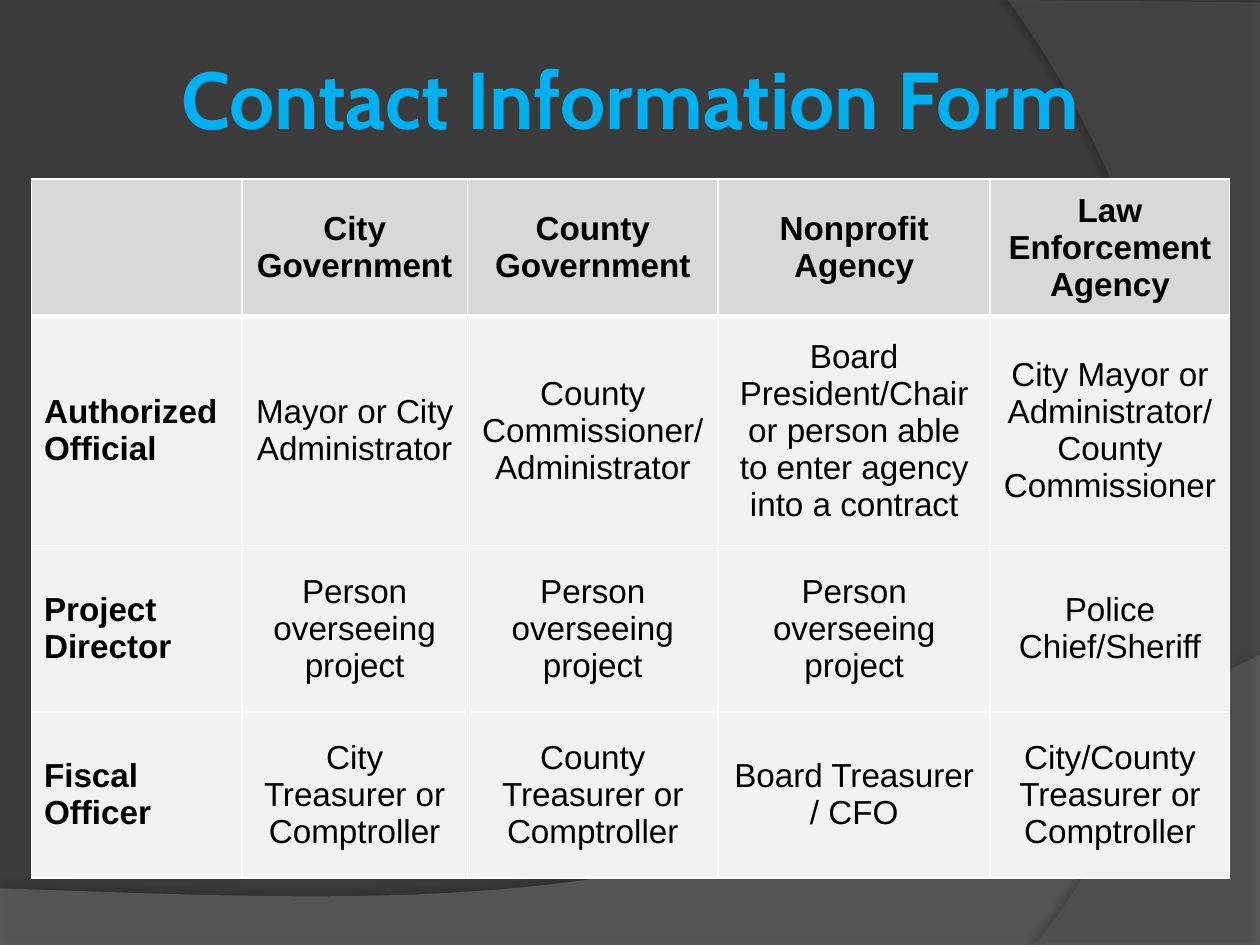
from lxml.etree import SubElement
from pptx import Presentation
from pptx.dml.color import RGBColor
from pptx.enum.text import MSO_ANCHOR, PP_ALIGN
from pptx.oxml import parse_xml
from pptx.oxml.ns import nsdecls, qn
from pptx.util import Inches, Pt

BACKDROP = RGBColor(0x3B, 0x3B, 0x3B)
LOWER_WAVE = RGBColor(0x7F, 0x7F, 0x7F)
RIGHT_WAVE = RGBColor(0x5E, 0x5E, 0x5E)
TITLE_BLUE = RGBColor(0x00, 0xB0, 0xF0)
HEADER_GREY = RGBColor(0xD8, 0xD8, 0xD8)
BODY_GREY = RGBColor(0xF2, 0xF2, 0xF2)
BLACK = RGBColor(0, 0, 0)
WHITE = RGBColor(0xFF, 0xFF, 0xFF)

COLUMN_WIDTHS = [1.67, 1.79, 1.99, 2.16, 1.9]
ROW_HEIGHTS = [1.09, 1.82, 1.32, 1.32]
CONTACTS = [
    ["", "City Government", "County Government", "Nonprofit Agency",
     "Law Enforcement Agency"],
    ["Authorized Official", "Mayor or City Administrator",
     "County Commissioner/ Administrator",
     "Board President/Chair or person able to enter agency into a contract",
     "City Mayor or Administrator/ County Commissioner"],
    ["Project Director"] + ["Person overseeing project"] * 3
    + ["Police Chief/Sheriff"],
    ["Fiscal Officer", "City Treasurer or Comptroller",
     "County Treasurer or Comptroller", "Board Treasurer / CFO",
     "City/County Treasurer or Comptroller"],
]


def curve_points(start, first, second, end, steps=40):
    """Return points along a cubic curve, without its start."""
    points = []
    for step in range(1, steps + 1):
        t = step / steps
        weights = ((1 - t) ** 3, 3 * t * (1 - t) ** 2, 3 * t * t * (1 - t), t ** 3)
        points.append(tuple(
            sum(weight * value for weight, value in zip(weights, values))
            for values in zip(start, first, second, end)))
    return points


def add_wave(page, box, corners, bends, color, opacity, shadow):
    """Draw a translucent wave whose corners and bends are relative to the box."""
    left, top = box
    points = corners + curve_points(corners[-1], *bends)
    placed = [(Inches(left + x), Inches(top + y)) for x, y in points]
    builder = page.shapes.build_freeform(*placed[0])
    builder.add_line_segments(placed[1:], close=True)
    wave = builder.convert_to_shape()
    wave.fill.solid()
    wave.fill.fore_color.rgb = color
    wave.line.fill.background()
    wave.shadow.inherit = False
    properties = wave.element.spPr
    tint = properties.find(qn("a:solidFill")).find(qn("a:srgbClr"))
    SubElement(tint, qn("a:alpha"), val=str(opacity * 1000))
    strength, blur, distance, angle = shadow
    outer = SubElement(
        properties.find(qn("a:effectLst")), qn("a:outerShdw"),
        blurRad=str(Pt(blur)), dist=str(Pt(distance)),
        dir=str(angle * 60000), algn="ctr", rotWithShape="0")
    shade = SubElement(outer, qn("a:srgbClr"), val=str(BLACK))
    SubElement(shade, qn("a:alpha"), val=str(strength * 1000))


def add_backdrop(page):
    """Fill the background and lay both waves over it."""
    page.background.fill.solid()
    page.background.fill.fore_color.rgb = BACKDROP
    add_wave(page, (0, 5.2), [(0, 1.85), (0, 2.3), (10, 2.3), (10, 0)],
             [(5.59, 2.09), (3.91, 1.99), (0, 1.85)],
             LOWER_WAVE, 45, (35, 4, 3.5, 270))
    add_wave(page, (8, 0), [(2, 0.02), (2, 7.5), (0.21, 7.5)],
             [(1.35, 6.19), (2.18, 3), (0, 0)],
             RIGHT_WAVE, 40, (45, 4, 4, 180))


def write_text(para, text, font, size, color, bold, align):
    """Write one styled run into a paragraph."""
    para.alignment = align
    span = para.add_run()
    span.text = text
    span.font.name = font
    span.font.size = Pt(size)
    span.font.bold = bold
    span.font.color.rgb = color


def add_title(page, box):
    """Place the centred title in the box."""
    frame = page.shapes.add_textbox(*map(Inches, box)).text_frame
    frame.word_wrap = True
    frame.vertical_anchor = MSO_ANCHOR.MIDDLE
    frame.margin_left = frame.margin_right = Inches(0.05)
    frame.margin_top = frame.margin_bottom = Inches(0.05)
    write_text(frame.paragraphs[0], "Contact Information Form", "Cabin", 46,
               TITLE_BLUE, True, PP_ALIGN.CENTER)


def set_borders(cell, top, bottom):
    """Give a cell white borders, with top and bottom widths in points."""
    properties = cell._tc.get_or_add_tcPr()
    widths = {"lnL": 1, "lnR": 1, "lnT": top, "lnB": bottom}
    for place, (side, width) in enumerate(widths.items()):
        properties.insert(place, parse_xml(
            f'<a:{side} {nsdecls("a")} w="{Pt(width)}"><a:solidFill>'
            f'<a:srgbClr val="{WHITE}"/></a:solidFill></a:{side}>'))


def add_contact_table(page, box):
    """Place the table of contacts in the box."""
    table = page.shapes.add_table(
        len(ROW_HEIGHTS), len(COLUMN_WIDTHS), *map(Inches, box)).table
    table.horz_banding = False
    for column, width in zip(table.columns, COLUMN_WIDTHS):
        column.width = Inches(width)
    for row, height in zip(table.rows, ROW_HEIGHTS):
        row.height = Inches(height)
    for r, texts in enumerate(CONTACTS):
        for c, text in enumerate(texts):
            cell = table.cell(r, c)
            cell.vertical_anchor = MSO_ANCHOR.MIDDLE
            cell.fill.solid()
            cell.fill.fore_color.rgb = BODY_GREY if r else HEADER_GREY
            set_borders(cell, 3 if r == 1 else 1, 3 if r == 0 else 1)
            if text:
                write_text(cell.text_frame.paragraphs[0], text, "Arial", 19,
                           BLACK, r == 0 or c == 0,
                           PP_ALIGN.CENTER if c else PP_ALIGN.LEFT)


def main():
    """Build the deck and save it."""
    deck = Presentation()
    deck.slide_width, deck.slide_height = Inches(10), Inches(7.5)
    page = deck.slides.add_slide(deck.slide_layouts[6])
    add_backdrop(page)
    add_title(page, (0, 0.3, 10, 0.95))
    add_contact_table(page, (0.25, 1.42, 9.5, 5.55))
    deck.save("out.pptx")


if __name__ == "__main__":
    main()
